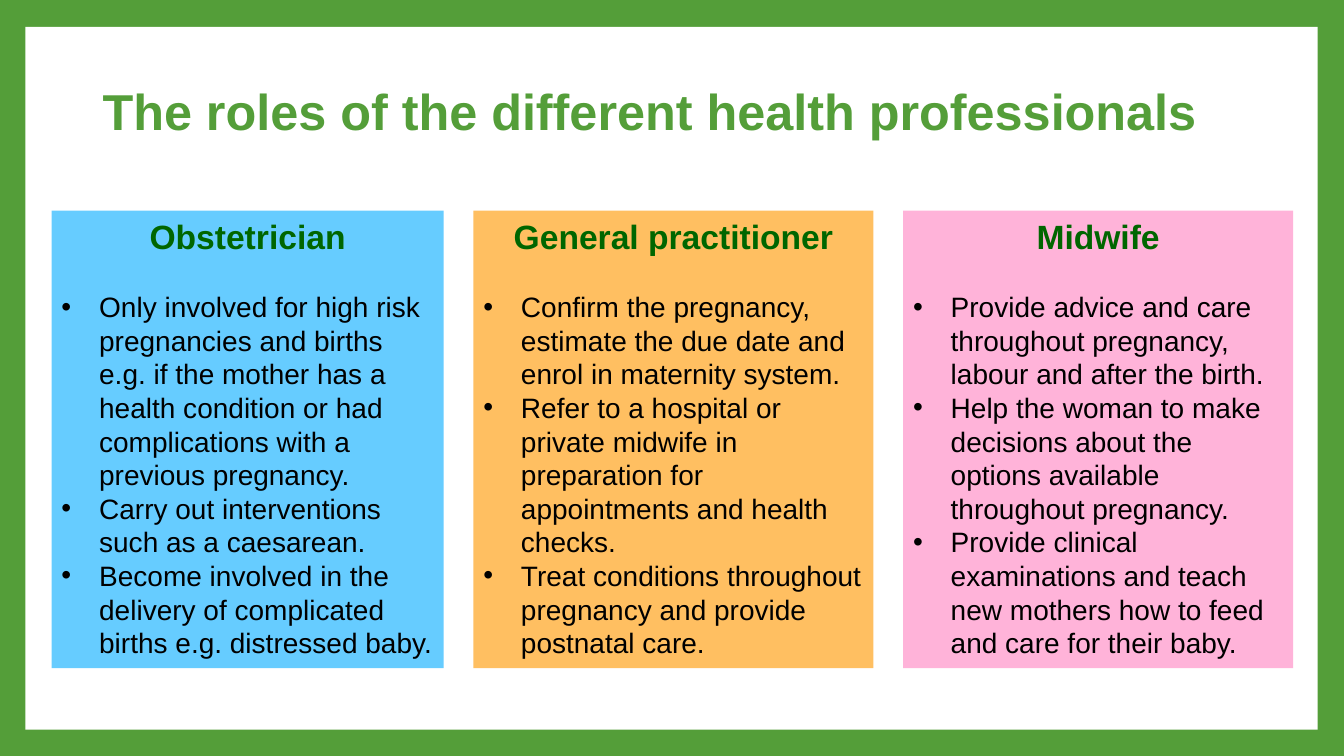
import pptx
import pptx.dml.color
import pptx.enum.shapes
import pptx.enum.text
import pptx.util
from lxml import etree
from pptx.oxml.ns import qn

Cm = pptx.util.Cm
Pt = pptx.util.Pt
RGBColor = pptx.dml.color.RGBColor
Align = pptx.enum.text.PP_ALIGN
Anchor = pptx.enum.text.MSO_ANCHOR
AutoSize = pptx.enum.text.MSO_AUTO_SIZE

GREEN = RGBColor(0x54, 0x9E, 0x39)
DARK_GREEN = RGBColor(0x00, 0x66, 0x00)
WHITE = RGBColor(0xFF, 0xFF, 0xFF)
BLACK = RGBColor(0x00, 0x00, 0x00)
BLUE = RGBColor(0x66, 0xCC, 0xFF)
ORANGE = RGBColor(0xFF, 0xBF, 0x61)
PINK = RGBColor(0xFF, 0xB3, 0xD9)

TITLE = "The roles of the different health professionals"
ROLES = [
    ("Obstetrician", BLUE, 9.88, [
        "Only involved for high risk pregnancies and births e.g. if the mother has a "
        "health condition or had complications with a previous pregnancy.",
        "Carry out interventions such as a caesarean.",
        "Become involved in the delivery of complicated births e.g. distressed baby.",
    ]),
    ("General practitioner", ORANGE, 10.08, [
        "Confirm the pregnancy, estimate the due date and enrol in maternity system.",
        "Refer to a hospital or private midwife in preparation for appointments and "
        "health checks.",
        "Treat conditions throughout pregnancy and provide postnatal care.",
    ]),
    ("Midwife", PINK, 9.83, [
        "Provide advice and care throughout pregnancy, labour and after the birth.",
        "Help the woman to make decisions about the options available throughout "
        "pregnancy.",
        "Provide clinical examinations and teach new mothers how to feed and care for "
        "their baby.",
    ]),
]

TITLE_FONT = {"name": "Arial", "size": Pt(36), "bold": True}
HEADING_FONT = {"name": "Arial", "size": Pt(24), "bold": True}
BODY_FONT = {"name": "Arial", "size": Pt(20), "bold": False}
TITLE_FRAME = {"word_wrap": True, "auto_size": AutoSize.NONE, "vertical_anchor": Anchor.MIDDLE}
CARD_FRAME = {"word_wrap": True, "vertical_anchor": Anchor.TOP}
TITLE_PARAGRAPH = {"alignment": Align.LEFT, "line_spacing": 0.9}
HEADING_PARAGRAPH = {"alignment": Align.CENTER, "space_after": Pt(24)}
BODY_PARAGRAPH = {"alignment": Align.LEFT}

CARDS_LEFT, CARDS_TOP, CARD_HEIGHT, CARD_GAP = 1.3, 5.31, 11.53, 0.75
BULLET_INDENT = Cm(0.95)


def apply(target, values):
    for name, value in values.items():
        setattr(target, name, value)


def write(paragraph, text, layout, font, color):
    paragraph.text = text
    apply(paragraph, layout)
    apply(paragraph.font, font)
    paragraph.font.color.rgb = color


def add_bullet(paragraph):
    properties = paragraph._p.get_or_add_pPr()
    properties.set("marL", str(BULLET_INDENT))
    properties.set("indent", str(-BULLET_INDENT))
    etree.SubElement(properties, qn("a:buFont")).set("typeface", "Arial")
    etree.SubElement(properties, qn("a:buChar")).set("char", "•")


def add_rectangle(slide, left, top, width, height, color):
    shape = slide.shapes.add_shape(
        pptx.enum.shapes.MSO_SHAPE.RECTANGLE, Cm(left), Cm(top), Cm(width), Cm(height))
    shape.shadow.inherit = False
    shape.fill.solid()
    shape.fill.fore_color.rgb = color
    shape.line.fill.background()
    return shape


def add_title(slide):
    title = slide.shapes.title
    apply(title, {"left": Cm(2.33), "top": Cm(1.04), "width": Cm(29.28), "height": Cm(3.68)})
    apply(title.text_frame, TITLE_FRAME)
    write(title.text_frame.paragraphs[0], TITLE, TITLE_PARAGRAPH, TITLE_FONT, GREEN)


def add_role(slide, left, heading, color, width, duties):
    card = add_rectangle(slide, left, CARDS_TOP, width, CARD_HEIGHT, color)
    frame = card.text_frame
    apply(frame, CARD_FRAME)
    write(frame.paragraphs[0], heading, HEADING_PARAGRAPH, HEADING_FONT, DARK_GREEN)
    for duty in duties:
        paragraph = frame.add_paragraph()
        add_bullet(paragraph)
        write(paragraph, duty, BODY_PARAGRAPH, BODY_FONT, BLACK)


def main():
    presentation = pptx.Presentation()
    presentation.slide_width = Cm(33.87)
    presentation.slide_height = Cm(19.05)
    slide = presentation.slides.add_slide(presentation.slide_layouts[5])
    slide.background.fill.solid()
    slide.background.fill.fore_color.rgb = GREEN

    panel = add_rectangle(slide, 0.64, 0.68, 32.57, 17.71, WHITE)
    slide.shapes.title.element.addprevious(panel.element)
    add_title(slide)

    left = CARDS_LEFT
    for heading, color, width, duties in ROLES:
        add_role(slide, left, heading, color, width, duties)
        left += width + CARD_GAP

    presentation.save("out.pptx")


if __name__ == "__main__":
    main()
